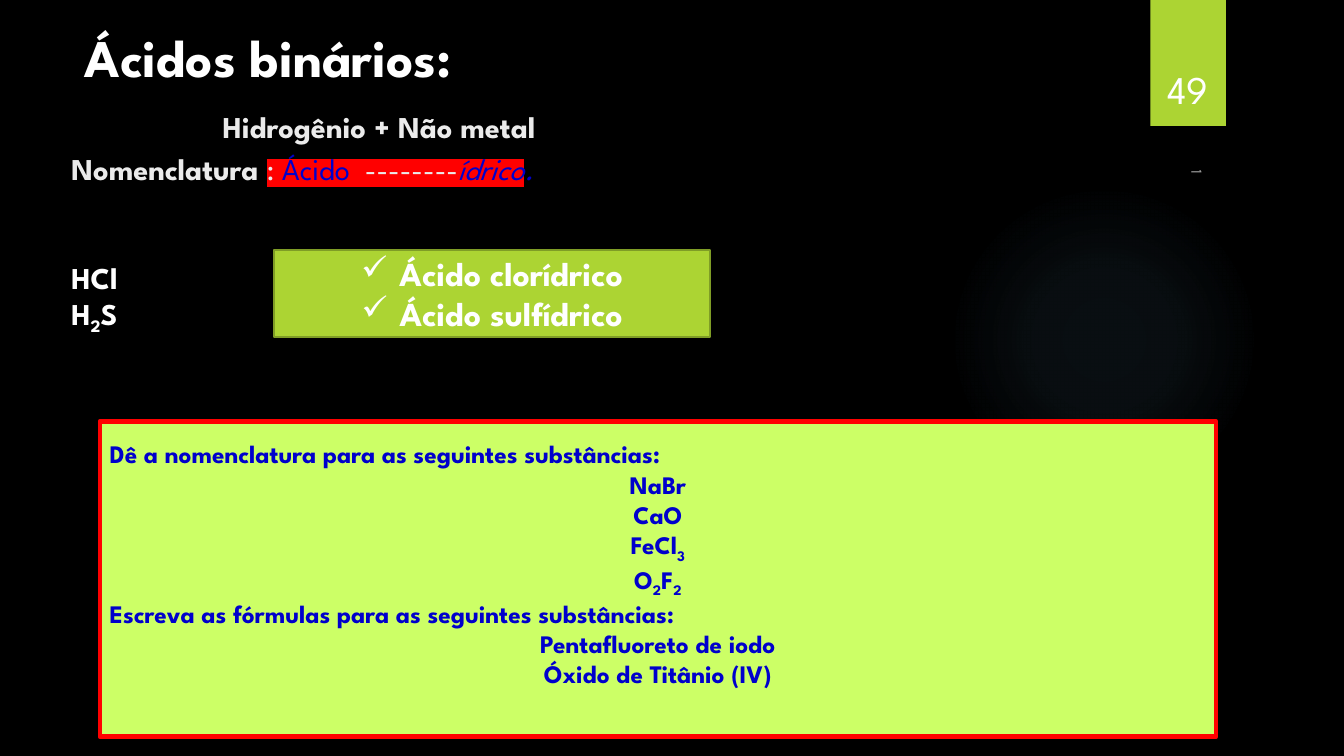
from lxml import etree
from pptx import Presentation
from pptx.dml.color import RGBColor
from pptx.enum.shapes import MSO_SHAPE
from pptx.enum.text import MSO_ANCHOR, PP_ALIGN
from pptx.oxml import parse_xml
from pptx.oxml.ns import nsdecls, qn
from pptx.util import Inches, Pt

RECT, OVAL = MSO_SHAPE.RECTANGLE, MSO_SHAPE.OVAL
TOP, MIDDLE, BOTTOM = MSO_ANCHOR.TOP, MSO_ANCHOR.MIDDLE, MSO_ANCHOR.BOTTOM
LEFT, CENTER = PP_ALIGN.LEFT, PP_ALIGN.CENTER
FONT = "League Spartan"
COLORS = {
    "black": "000000", "white": "FFFFFF", "pale": "EBEBEB", "blue": "0000CC",
    "red": "FF0000", "green": "ACD433", "edge": "7F9D26", "lime": "CCFF66",
    "glow": "7AC4F0",
}


def add_box(at, anchor=MIDDLE, kind=None, fill=None, line=None, width=0):
    """Add a text box, or a preset shape when kind is given."""
    at = [Inches(n) for n in at]
    if kind is None:
        box = slide.shapes.add_textbox(*at)
    else:
        box = slide.shapes.add_shape(kind, *at)
        box.shadow.inherit = False
        if fill:
            box.fill.solid()
            box.fill.fore_color.rgb = RGBColor.from_string(COLORS[fill])
        else:
            box.fill.background()
        if line:
            box.line.color.rgb = RGBColor.from_string(COLORS[line])
            box.line.width = Pt(width)
        else:
            box.line.fill.background()
    box.text_frame.word_wrap = True
    box.text_frame.vertical_anchor = anchor
    return box


def add_line(box, runs, size, color, bold=True, align=LEFT):
    """Append a paragraph; each run is a text or (text, style dict)."""
    frame = box.text_frame
    para = frame.paragraphs[0]
    if para.runs:
        para = frame.add_paragraph()
    para.alignment = align
    for item in runs:
        text, style = (item, {}) if isinstance(item, str) else item
        run = para.add_run()
        run.text = text
        font = run.font
        font.name, font.size = FONT, Pt(size)
        font.bold = style.get("bold", bold)
        font.italic = style.get("italic", False)
        font.color.rgb = RGBColor.from_string(COLORS[style.get("color", color)])
        props = run._r.get_or_add_rPr()
        if style.get("sub"):
            props.set("baseline", "-25000")
        if style.get("mark"):
            mark = parse_xml(f'<a:highlight {nsdecls("a")}>'
                             f'<a:srgbClr val="{COLORS["red"]}"/></a:highlight>')
            props.find(qn("a:solidFill")).addnext(mark)
    return para


prs = Presentation()
prs.slide_width, prs.slide_height = Inches(13.33), Inches(7.5)
slide = prs.slides.add_slide(prs.slide_layouts[6])
slide.background.fill.solid()
slide.background.fill.fore_color.rgb = RGBColor.from_string(COLORS["black"])

# Soft glow and page tab
glow = add_box((9.41, 1.83, 3.08, 3.08), kind=OVAL)
stops = "".join(
    f'<a:gs pos="{pos}000"><a:srgbClr val="{COLORS["glow"]}">'
    f'<a:alpha val="{alpha}000"/></a:srgbClr></a:gs>'
    for pos, alpha in ((0, 7), (36, 6), (69, 0)))
grad = parse_xml(
    f'<a:gradFill {nsdecls("a")} rotWithShape="1"><a:gsLst>{stops}</a:gsLst>'
    '<a:path path="circle"><a:fillToRect l="50000" t="50000" r="50000" '
    'b="50000"/></a:path></a:gradFill>')
props = glow._element.spPr
props.replace(props.find(qn("a:noFill")), grad)
add_box((11.41, 0, 0.75, 1.25), kind=RECT, fill="green")

# Heading, naming rule and formulas: runs, size, colour, indent, space before
sub = {"sub": True}
rule = {"bold": False, "color": "blue"}
marked = {**rule, "mark": True}
heading = [
    (["Ácidos binários:"], 37.8, "white", 0.13, 0),
    (["Hidrogênio + Não metal"], 21.6, "pale", 1.5, 15),
    (["Nomenclatura ", (": ", {**marked, "color": "pale"}), ("Ácido", marked),
      ("  --------", {**marked, "color": "pale"}),
      ("ídrico", {**marked, "italic": True}),
      (".", {**rule, "italic": True})], 21.6, "pale", 0, 3.5),
    (["HCl"], 21.6, "white", 0, 52),
    (["H", ("2", sub), "S"], 21.6, "white", 0, 0),
]
title = add_box((0.61, 0.19, 11.61, 3.97), TOP)
for runs, size, color, indent, gap in heading:
    para = add_line(title, runs, size, color)
    para._p.get_or_add_pPr().set("marL", str(Inches(indent)))
    if gap:
        para.space_before = Pt(gap)

# Acid names
names = add_box((2.72, 2.48, 4.32, 0.86), MIDDLE, RECT, "green", "edge", 1.5)
for name in ("Ácido clorídrico", "Ácido sulfídrico"):
    para = add_line(names, [name], 24, "white", align=CENTER)
    props = para._p.get_or_add_pPr()
    props.set("marL", str(Inches(0.38)))
    props.set("indent", str(Inches(-0.38)))
    etree.SubElement(props, qn("a:buChar")).set("char", "✓")

# Exercises
tasks = add_box((0.99, 4.18, 11.07, 3.13), MIDDLE, RECT, "lime", "red", 3.25)
tasks.text_frame.margin_bottom = Inches(0.35)
for ask, items in (
    ("Dê a nomenclatura para as seguintes substâncias:",
     [["NaBr"], ["CaO"], ["FeCl", ("3", sub)],
      ["O", ("2", sub), "F", ("2", sub)]]),
    ("Escreva as fórmulas para as seguintes substâncias:",
     [["Pentafluoreto de iodo"], ["Óxido de Titânio (IV)"]]),
):
    add_line(tasks, [ask], 18, "blue")
    for runs in items:
        add_line(tasks, runs, 18, "blue", align=CENTER)

# Footer and page number
foot = add_box((9.79, 3.53, 4.22, 0.33), BOTTOM)
foot.rotation = 90
para = add_line(foot, ["1"], 11, "white", bold=False)
tint = para.runs[0]._r.rPr.find(qn("a:solidFill"))[0]
etree.SubElement(tint, qn("a:alpha")).set("val", "60000")
page = add_box((11.32, 0.32, 0.92, 0.84), BOTTOM)
add_line(page, ["49"], 28, "white", bold=False, align=CENTER)

prs.save("out.pptx")
